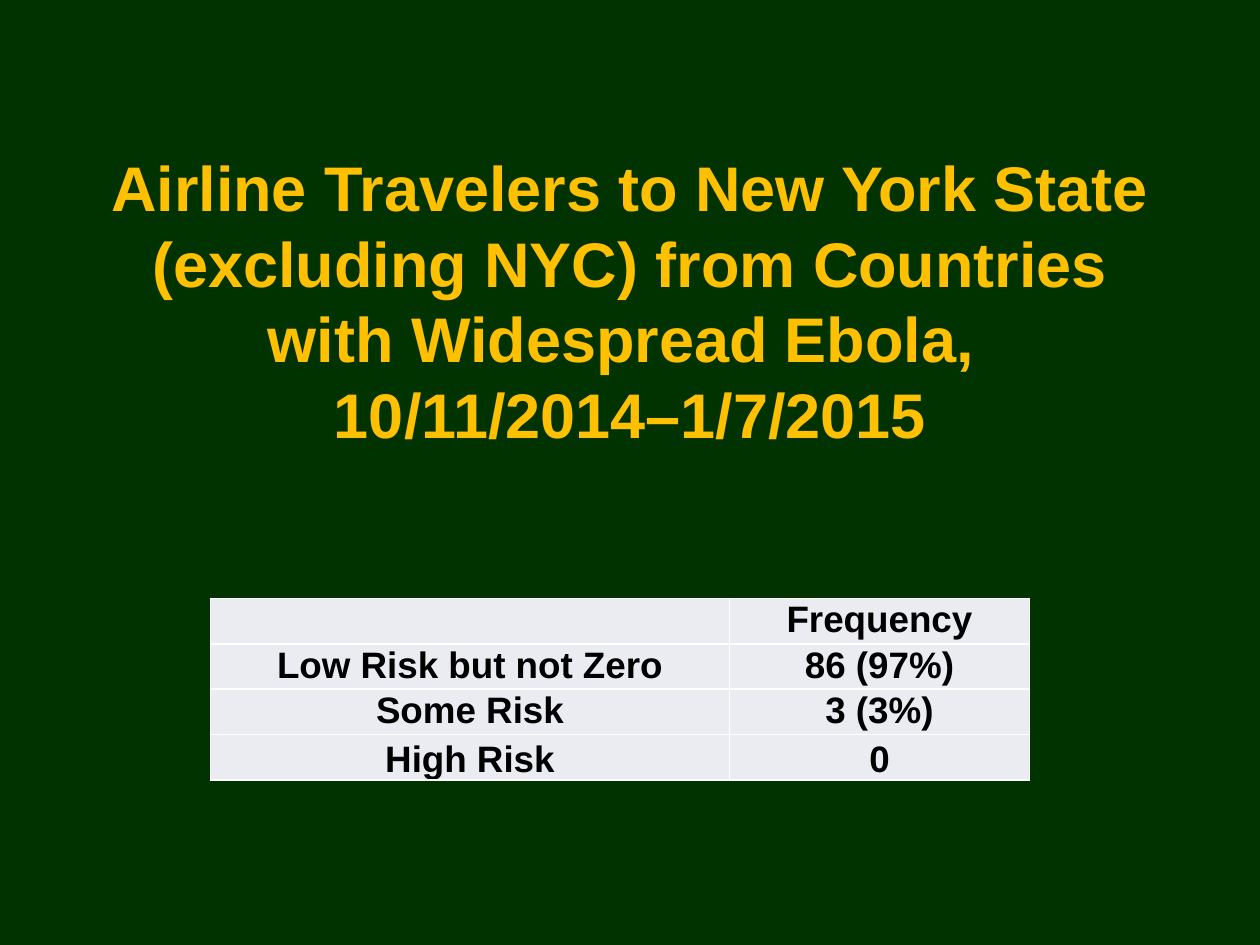
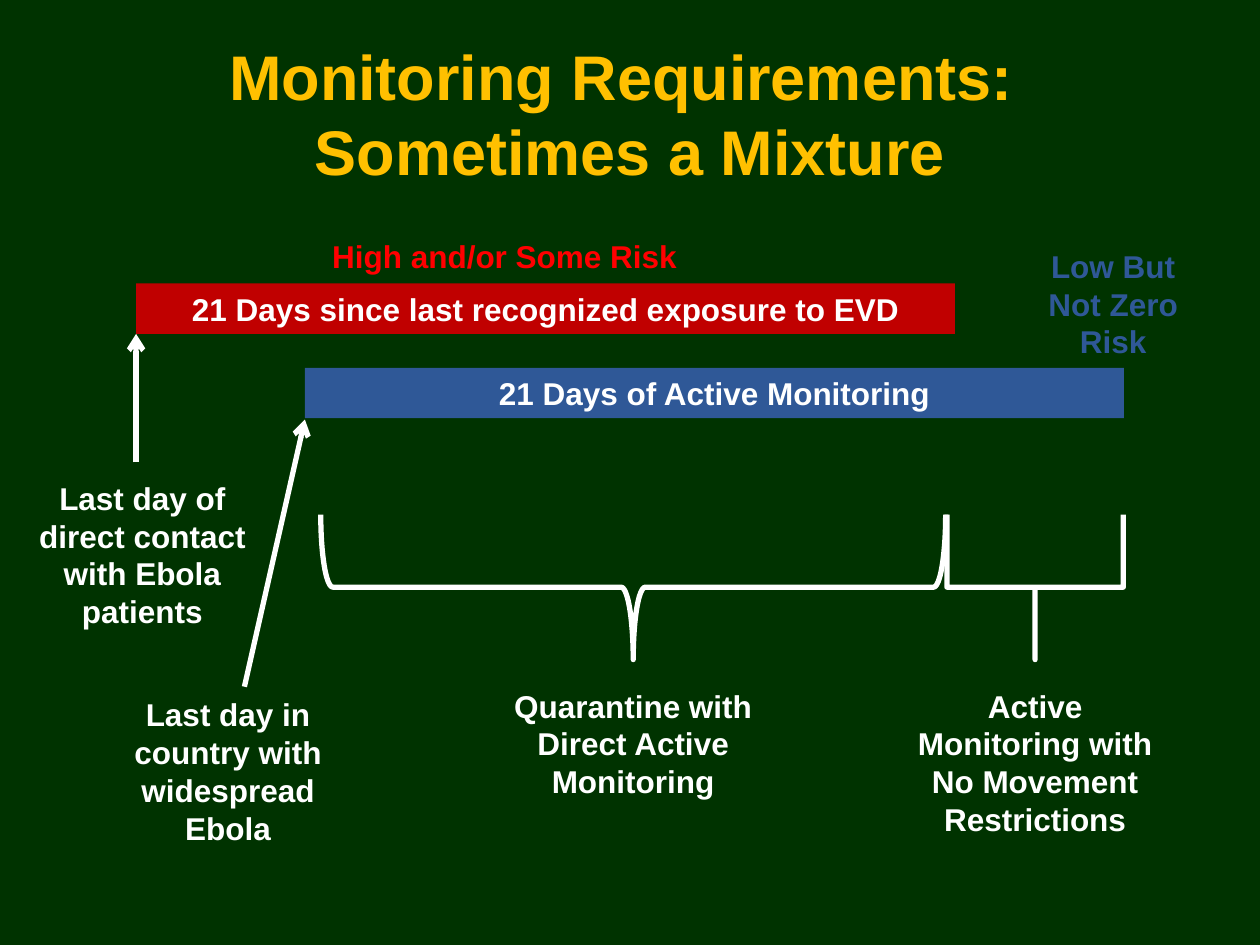
from pptx import Presentation
from pptx.dml.color import RGBColor
from pptx.enum.shapes import MSO_CONNECTOR, MSO_SHAPE
from pptx.enum.text import MSO_ANCHOR, MSO_AUTO_SIZE, PP_ALIGN
from pptx.oxml import parse_xml
from pptx.oxml.ns import nsdecls
from pptx.util import Inches, Pt

GREEN = RGBColor(0x00, 0x33, 0x00)
GOLD = RGBColor(0xFF, 0xC0, 0x00)
WHITE = RGBColor(0xFF, 0xFF, 0xFF)
BLACK = RGBColor(0x00, 0x00, 0x00)
PALE = RGBColor(0xEA, 0xEC, 0xF2)
CRIMSON = RGBColor(0xC0, 0x00, 0x00)
RED = RGBColor(0xFF, 0x00, 0x00)
BLUE = RGBColor(0x2F, 0x58, 0x97)

prs = Presentation()
prs.slide_width = Inches(10)
prs.slide_height = Inches(7.5)
background = prs.slide_master.background.fill
background.solid()
background.fore_color.rgb = GREEN


def write(frame, text, size, color):
    frame.text = text
    frame.word_wrap = True
    for paragraph in frame.paragraphs:
        paragraph.alignment = PP_ALIGN.CENTER
        for run in paragraph.runs:
            run.font.name = "Arial"
            run.font.size = Pt(size)
            run.font.bold = True
            run.font.color.rgb = color


def add_titled_slide(text, left, top, width, height, anchor):
    slide = prs.slides.add_slide(prs.slide_layouts[5])
    title = slide.shapes.title
    title.left, title.top = Inches(left), Inches(top)
    title.width, title.height = Inches(width), Inches(height)
    write(title.text_frame, text, 36, GOLD)
    title.text_frame.auto_size = MSO_AUTO_SIZE.NONE
    title.text_frame.vertical_anchor = anchor
    return slide


travelers = add_titled_slide(
    "Airline Travelers to New York State (excluding NYC) from Countries "
    "with Widespread Ebola, \v10/11/2014–1/7/2015",
    0.75, 1.13, 8.5, 2.83, MSO_ANCHOR.TOP)

risk_rows = [
    ("", "Frequency"),
    ("Low Risk but not Zero", "86 (97%)"),
    ("Some Risk", "3 (3%)"),
    ("High Risk", "0"),
]
risks = travelers.shapes.add_table(
    len(risk_rows), 2, Inches(1.67), Inches(4.75), Inches(6.5), Inches(1.43)).table
risks.first_row = False
risks.horz_banding = False
risks.columns[0].width = Inches(4.12)
risks.columns[1].width = Inches(2.38)
for row, values in enumerate(risk_rows):
    risks.rows[row].height = Inches(0.36)
    for column, value in enumerate(values):
        cell = risks.cell(row, column)
        cell.margin_left = cell.margin_right = cell.margin_top = Inches(0.01)
        cell.margin_bottom = 0
        last_row = row == len(risk_rows) - 1
        cell.vertical_anchor = MSO_ANCHOR.BOTTOM if last_row else MSO_ANCHOR.TOP
        cell.fill.solid()
        cell.fill.fore_color.rgb = PALE
        write(cell.text_frame, value, 21, BLACK)
        for position, side in enumerate(("lnL", "lnR", "lnT", "lnB")):
            border = parse_xml(
                f'<a:{side} {nsdecls("a")} w="{Pt(1)}"><a:solidFill>'
                f'<a:srgbClr val="{WHITE}"/></a:solidFill></a:{side}>')
            cell._tc.get_or_add_tcPr().insert(position, border)

monitoring = add_titled_slide(
    "Monitoring Requirements: \vSometimes a Mixture",
    0.5, 0.31, 9, 1.17, MSO_ANCHOR.MIDDLE)

periods = [
    ("21 Days since last recognized exposure to EVD", 1.08, 2.25, CRIMSON),
    ("21 Days of Active Monitoring", 2.42, 2.92, BLUE),
]
for text, left, top, color in periods:
    period = monitoring.shapes.add_shape(
        MSO_SHAPE.RECTANGLE, Inches(left), Inches(top), Inches(6.5), Inches(0.4))
    period.shadow.inherit = False
    period.fill.solid()
    period.fill.fore_color.rgb = color
    period.line.fill.background()
    write(period.text_frame, text, 18, WHITE)

for start_x, start_y, end_x, end_y in [(1.08, 3.67, 1.08, 2.65), (1.94, 5.45, 2.42, 3.33)]:
    pointer = monitoring.shapes.add_connector(
        MSO_CONNECTOR.STRAIGHT,
        Inches(start_x), Inches(start_y), Inches(end_x), Inches(end_y))
    pointer.line.color.rgb = WHITE
    pointer.line.width = Pt(3)
    pointer.line._get_or_add_ln().append(
        parse_xml(f'<a:tailEnd {nsdecls("a")} type="arrow"/>'))
    pointer._element.spPr.append(parse_xml(f'<a:effectLst {nsdecls("a")}/>'))

for left, top, span, curve in [(4.45, 2.18, 4.96, 0.0833), (7.64, 3.96, 1.4, 0)]:
    brace = monitoring.shapes.add_shape(
        MSO_SHAPE.RIGHT_BRACE, Inches(left), Inches(top), Inches(1.15), Inches(span))
    brace.rotation = 90
    brace.adjustments[0] = curve
    brace.shadow.inherit = False
    brace.fill.background()
    brace.line.color.rgb = WHITE
    brace.line.width = Pt(3)

labels = [
    ("Last day of direct contact with Ebola patients", 0.17, 3.75, 1.92, 1.31, WHITE),
    ("Last day in country with widespread Ebola", 0.67, 5.47, 2.28, 1.31, WHITE),
    ("Quarantine with Direct Active Monitoring", 3.9, 5.4, 2.25, 1.01, WHITE),
    ("Active Monitoring with No Movement Restrictions", 7.09, 5.4, 2.25, 1.31, WHITE),
    ("High and/or Some Risk", 2.38, 1.83, 3.25, 0.4, RED),
    ("Low But Not Zero Risk", 8.17, 1.91, 1.33, 1.01, BLUE),
]
for text, left, top, width, height, color in labels:
    label = monitoring.shapes.add_textbox(
        Inches(left), Inches(top), Inches(width), Inches(height))
    write(label.text_frame, text, 18, color)

prs.save("out.pptx")
